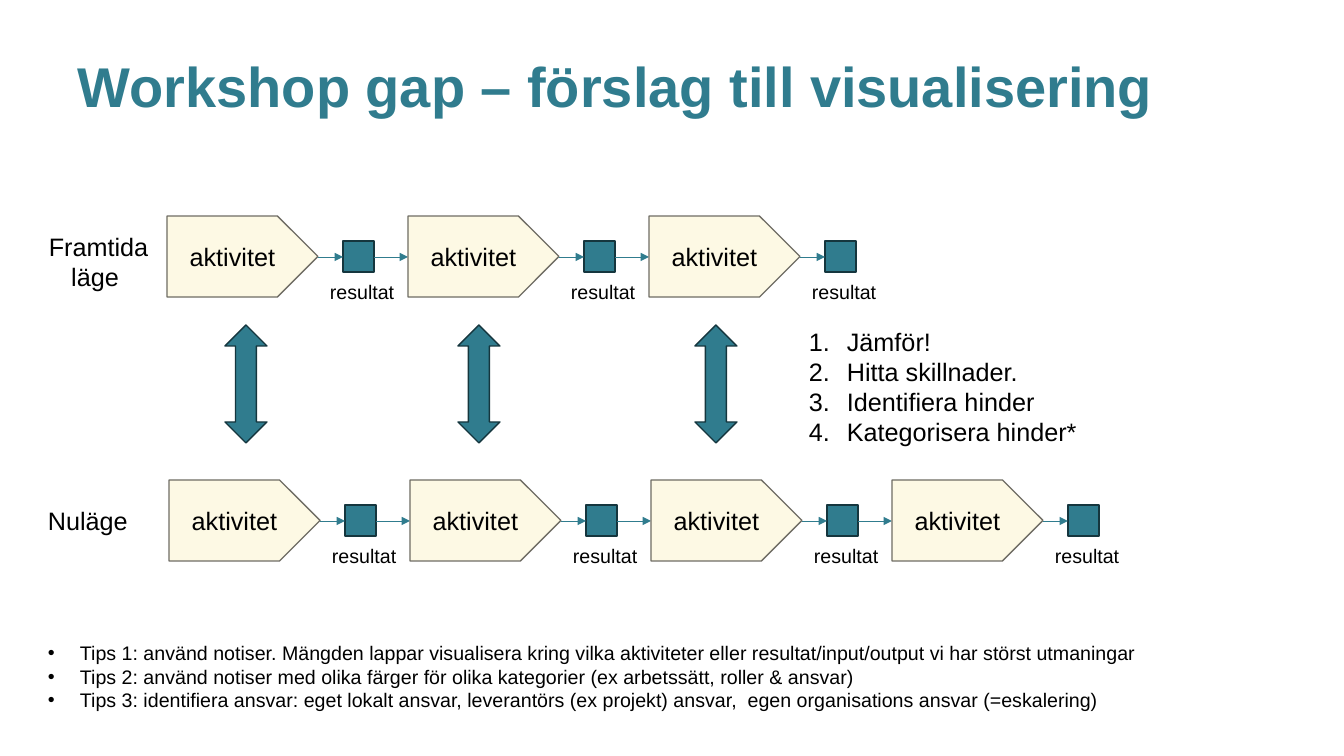
import pptx
import pptx.dml.color
import pptx.enum.shapes
import pptx.enum.text
import pptx.oxml.ns
import pptx.util
from lxml import etree

SLIDE_WIDTH, SLIDE_HEIGHT = 1344, 756
EMU_PER_PX = 12192000 / SLIDE_WIDTH
FONT = "Arial"
COLORS = {
    "teal": "307C8E",
    "teal_edge": "15363E",
    "cream": "FDF9E4",
    "cream_edge": "6F6D64",
    "black": "000000",
}
PRESETS = pptx.enum.shapes.MSO_SHAPE
ALIGN = pptx.enum.text.PP_ALIGN

STEP_PITCH = 241
ACTIVITY_WIDTH, ACTIVITY_HEIGHT = 151, 81
RESULT_OFFSET_X, RESULT_OFFSET_Y, RESULT_SIZE = 176, 25, 31
FLOW_OFFSET_Y = 41

COMPARE_STEPS = ["Jämför!", "Hitta skillnader.", "Identifiera hinder", "Kategorisera hinder*"]
TIPS = [
    "Tips 1: använd notiser. Mängden lappar visualisera kring vilka aktiviteter eller "
    "resultat/input/output vi har störst utmaningar",
    "Tips 2: använd notiser med olika färger för olika kategorier (ex arbetssätt, roller & ansvar)",
    "Tips 3: identifiera ansvar: eget lokalt ansvar, leverantörs (ex projekt) ansvar,  "
    "egen organisations ansvar (=eskalering)",
]


def px(value):
    return pptx.util.Emu(round(value * EMU_PER_PX))


def rgb(name):
    return pptx.dml.color.RGBColor.from_string(COLORS[name])


def add_run(paragraph, text, size, color="black", bold=False):
    run = paragraph.add_run()
    run.text = text
    run.font.name = FONT
    run.font.size = pptx.util.Pt(size)
    run.font.bold = bold
    run.font.color.rgb = rgb(color)


def add_text_box(slide, left, top, width, height, wrap=False):
    box = slide.shapes.add_textbox(px(left), px(top), px(width), px(height))
    box.text_frame.word_wrap = wrap
    box.text_frame.auto_size = pptx.enum.text.MSO_AUTO_SIZE.SHAPE_TO_FIT_TEXT
    return box.text_frame


def add_label(slide, left, top, width, height, lines, size, align=ALIGN.LEFT):
    paragraph = add_text_box(slide, left, top, width, height).paragraphs[0]
    paragraph.alignment = align
    for index, line in enumerate(lines):
        if index:
            paragraph.add_line_break()
        add_run(paragraph, line, size)


def add_list(slide, left, top, width, height, items, size, indent, marker, wrap=False):
    """Add a list whose marker is a pair: bullet element tag and its attributes."""
    frame = add_text_box(slide, left, top, width, height, wrap)
    tag, attributes = marker
    for index, item in enumerate(items):
        paragraph = frame.add_paragraph() if index else frame.paragraphs[0]
        properties = paragraph._p.get_or_add_pPr()
        properties.set("marL", str(px(indent)))
        properties.set("indent", str(-px(indent)))
        etree.SubElement(properties, pptx.oxml.ns.qn("a:buFont"), typeface=FONT)
        etree.SubElement(properties, pptx.oxml.ns.qn(tag), **attributes)
        add_run(paragraph, item, size)


def add_preset(slide, preset, left, top, width, height, fill, edge):
    shape = slide.shapes.add_shape(preset, px(left), px(top), px(width), px(height))
    shape.shadow.inherit = False
    shape.fill.solid()
    shape.fill.fore_color.rgb = rgb(fill)
    shape.line.color.rgb = rgb(edge)
    shape.line.width = pptx.util.Pt(1)
    return shape


def add_flow_arrow(slide, start, end, y):
    connector = slide.shapes.add_connector(
        pptx.enum.shapes.MSO_CONNECTOR.STRAIGHT, px(start), px(y), px(end), px(y))
    connector.line.color.rgb = rgb("teal")
    connector.line.width = pptx.util.Pt(0.5)
    line = connector.line._get_or_add_ln()
    etree.SubElement(line, pptx.oxml.ns.qn("a:tailEnd"), type="triangle")
    etree.SubElement(connector._element.spPr, pptx.oxml.ns.qn("a:effectLst"))


def add_activity(slide, left, top):
    activity = add_preset(slide, PRESETS.PENTAGON, left, top, ACTIVITY_WIDTH, ACTIVITY_HEIGHT,
                          "cream", "cream_edge")
    activity.text_frame.vertical_anchor = pptx.enum.text.MSO_ANCHOR.MIDDLE
    paragraph = activity.text_frame.paragraphs[0]
    paragraph.alignment = ALIGN.CENTER
    add_run(paragraph, "aktivitet", 18)


def add_process(slide, left, top, count):
    """Add a row of activities, each leading to a result that feeds the next one."""
    flow_y = top + FLOW_OFFSET_Y
    for index in range(count):
        step_left = left + index * STEP_PITCH
        result_left = step_left + RESULT_OFFSET_X
        add_activity(slide, step_left, top)
        add_preset(slide, PRESETS.RECTANGLE, result_left, top + RESULT_OFFSET_Y,
                   RESULT_SIZE, RESULT_SIZE, "teal", "teal_edge")
        add_label(slide, step_left + 153, top + 59, 85, 34, ["resultat"], 14)
        add_flow_arrow(slide, step_left + ACTIVITY_WIDTH, result_left, flow_y)
        if index < count - 1:
            add_flow_arrow(slide, result_left + RESULT_SIZE, step_left + STEP_PITCH, flow_y)


def add_title(slide, text):
    frame = slide.shapes.add_textbox(px(68), px(39), px(1210), px(126)).text_frame
    frame.word_wrap = True
    frame.margin_top = px(6)
    paragraph = frame.paragraphs[0]
    paragraph.line_spacing = 1.1
    add_run(paragraph, text, 40, "teal", bold=True)


def main():
    presentation = pptx.Presentation()
    presentation.slide_width = px(SLIDE_WIDTH)
    presentation.slide_height = px(SLIDE_HEIGHT)
    slide = presentation.slides.add_slide(presentation.slide_layouts[6])

    add_title(slide, "Workshop gap – förslag till visualisering")
    add_label(slide, 38, 226, 121, 71, ["Framtida", "läge "], 18, ALIGN.CENTER)
    add_process(slide, 167, 216, 3)
    add_label(slide, 38, 500, 101, 40, ["Nuläge"], 18)
    add_process(slide, 169, 480, 4)

    for left in (225, 458, 695):
        add_preset(slide, PRESETS.UP_DOWN_ARROW, left, 325, 42, 118, "teal", "teal_edge")

    add_list(slide, 799, 321, 290, 132, COMPARE_STEPS, 18, 38,
             ("a:buAutoNum", {"type": "arabicPeriod"}))
    add_list(slide, 38, 636, 1123, 82, TIPS, 14, 32, ("a:buChar", {"char": "•"}), wrap=True)

    presentation.save("out.pptx")


if __name__ == "__main__":
    main()
